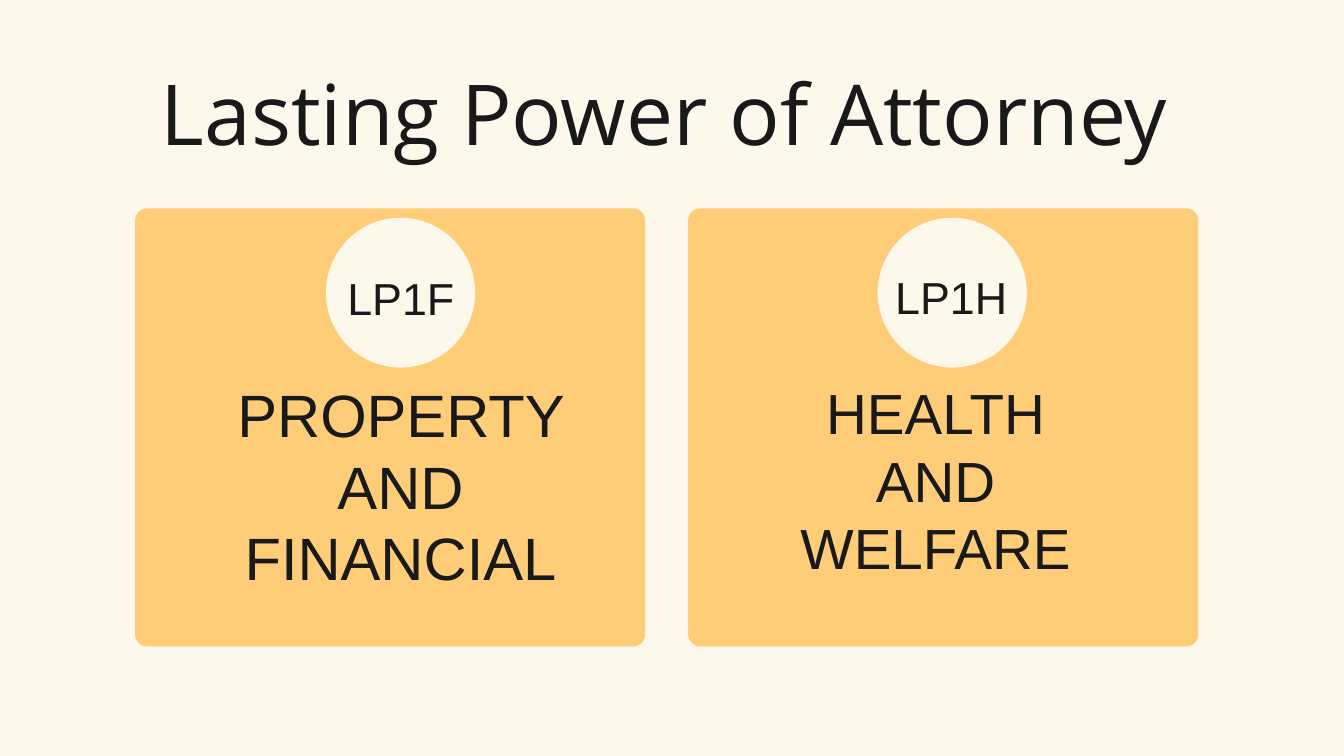
from pptx import Presentation
from pptx.dml.color import RGBColor
from pptx.enum.shapes import MSO_SHAPE as SHAPE
from pptx.enum.text import PP_ALIGN as ALIGN
from pptx.util import Emu, Pt

PX = 9144  # EMU per px, 100 px to the inch
CREAM = RGBColor(0xFD, 0xF8, 0xEC)
AMBER = RGBColor(0xFF, 0xCD, 0x78)
INK = RGBColor(0x19, 0x19, 0x19)

CARD_W, CARD_H, CARD_TOP = 759, 652, 310
CORNER = 18


def px(*values):
    return [Emu(v * PX) for v in values]


def add_shape(s, kind, box, color):
    sp = s.shapes.add_shape(kind, *px(*box))
    sp.shadow.inherit = False
    sp.fill.solid()
    sp.fill.fore_color.rgb = color
    sp.line.fill.background()
    return sp


def add_text(s, box, text, size, leading, font="Arial"):
    tf = s.shapes.add_textbox(*px(*box)).text_frame
    tf.word_wrap = True
    tf.margin_left = tf.margin_right = tf.margin_top = tf.margin_bottom = 0
    tf.text = text
    for p in tf.paragraphs:
        p.alignment = ALIGN.CENTER
        p.line_spacing = Pt(leading)
        for r in p.runs:
            r.font.size = Pt(size)
            r.font.name = font
            r.font.color.rgb = INK


def add_card(s, left, badge_x, code, code_box, label, label_box, size, leading):
    """Card with a round badge; the inner boxes are relative to the card."""
    def inside(x, y, w, h):
        return left + x, CARD_TOP + y, w, h

    card = add_shape(s, SHAPE.ROUNDED_RECTANGLE, inside(0, 0, CARD_W, CARD_H), AMBER)
    card.adjustments[0] = CORNER / CARD_H
    add_text(s, inside(*label_box), label, size, leading)
    add_shape(s, SHAPE.OVAL, inside(badge_x, 14, 222, 223), CREAM)
    add_text(s, inside(*code_box), code, 48, 75.4)


def main():
    prs = Presentation()
    prs.slide_width, prs.slide_height = px(2000, 1125)
    s = prs.slides.add_slide(prs.slide_layouts[6])
    s.background.fill.solid()
    s.background.fill.fore_color.rgb = CREAM

    # Cards
    add_card(s, 201, 284, "LP1F", (244, 68, 303, 97),
             "PROPERTY AND FINANCIAL", (77, 252, 636, 319), 64, 76.8)
    add_card(s, 1024, 282, "LP1H", (228, 67, 327, 97),
             "HEALTH \nAND \nWELFARE ", (62, 252, 636, 300), 60.6, 72.7)

    # Title
    add_text(s, (142, 66, 1693, 168), "Lasting Power of Attorney", 90, 126, "Open Sans")
    prs.save("out.pptx")


if __name__ == "__main__":
    main()
